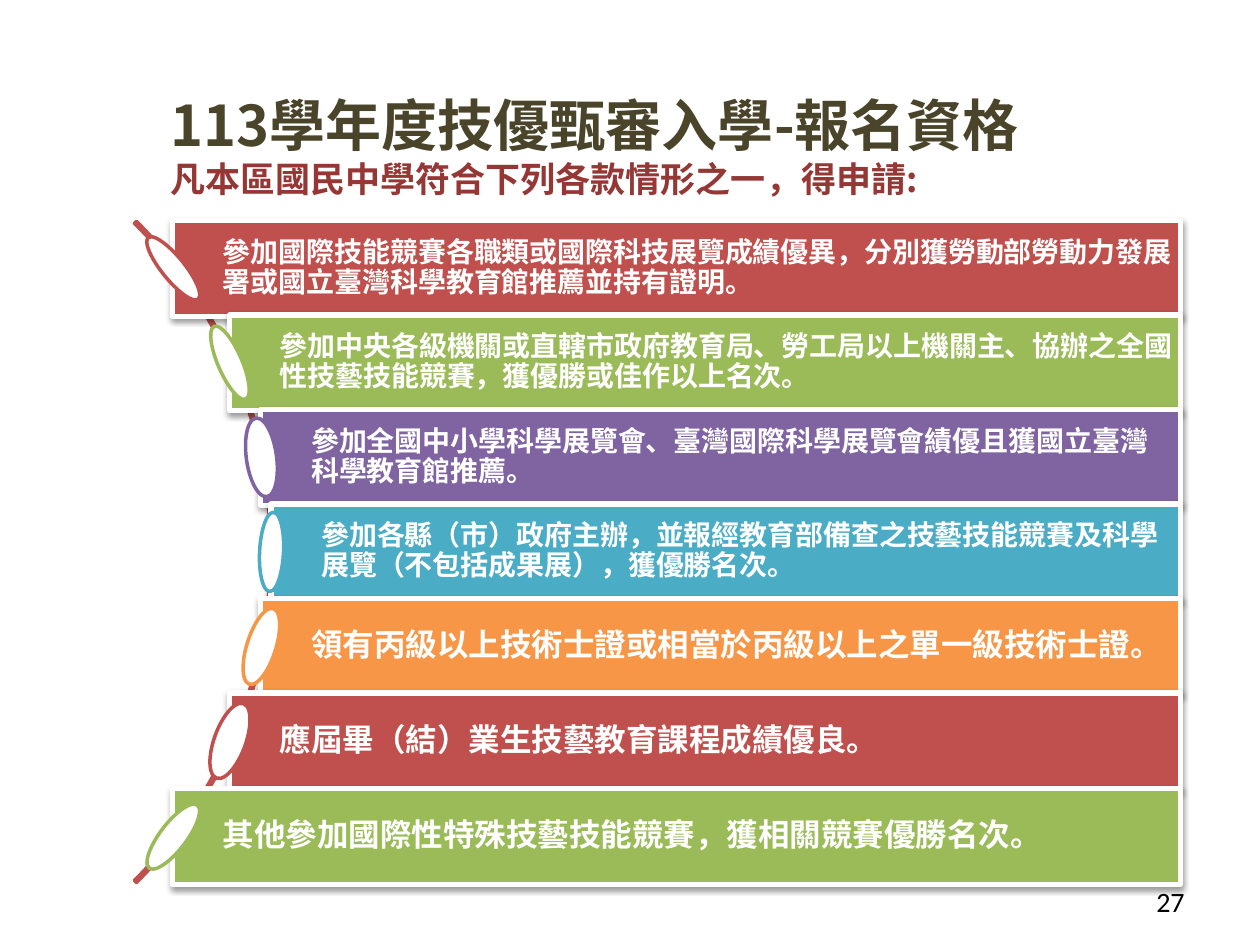
"""Build the slide listing who may apply for skills-based admission."""
from dataclasses import dataclass

from lxml import etree
from pptx import Presentation
from pptx.dml.color import RGBColor
from pptx.enum.shapes import MSO_SHAPE
from pptx.enum.text import MSO_ANCHOR, MSO_AUTO_SIZE, PP_ALIGN
from pptx.oxml.ns import qn
from pptx.shapes.autoshape import Shape
from pptx.slide import Slide
from pptx.util import Pt

RECTANGLE, ELLIPSE, BLOCK_ARC = MSO_SHAPE.RECTANGLE, MSO_SHAPE.OVAL, MSO_SHAPE.BLOCK_ARC
MIDDLE = MSO_ANCHOR.MIDDLE
LEFT, RIGHT = PP_ALIGN.LEFT, PP_ALIGN.RIGHT
NO_FIT = MSO_AUTO_SIZE.NONE

EMU_PER_PX = 9144
BAR_RIGHT = 937
BAR_HEIGHT = 76
BARS_TOP = 175
BARS_SPAN = 451
MARKER_WIDTH = 63
MARKER_OFFSET = 50


@dataclass(frozen=True)
class Theme:
    """Colours, fonts and type sizes of the slide."""

    red: str = "C0504D"
    green: str = "9BBB59"
    purple: str = "8064A2"
    teal: str = "4BACC6"
    orange: str = "F79646"
    olive: str = "4A452A"
    maroon: str = "953735"
    white: str = "FFFFFF"
    black: str = "000000"
    cjk_font: str = "Noto Sans CJK SC"
    number_font: str = "Calibri"
    title_size: int = 32
    subtitle_size: int = 20
    long_size: int = 16
    short_size: int = 18
    number_size: int = 16


THEME = Theme()


@dataclass(frozen=True)
class Condition:
    """One eligibility bar and the tilted marker at its left end."""

    left: int
    color: str
    size: int
    marker_height: int
    marker_tilt: float
    text: str


CONDITIONS = (
    Condition(137, THEME.red, THEME.long_size, 18, 51,
              "參加國際技能競賽各職類或國際科技展覽成績優異，分別獲勞動部勞動力發展署或國立臺灣科學教育館推薦並持有證明。"),
    Condition(182, THEME.green, THEME.long_size, 19, 66.5,
              "參加中央各級機關或直轄市政府教育局、勞工局以上機關主、協辦之全國性技藝技能競賽，獲優勝或佳作以上名次。"),
    Condition(207, THEME.purple, THEME.long_size, 24, 262.2,
              "參加全國中小學科學展覽會、臺灣國際科學展覽會績優且獲國立臺灣科學教育館推薦。"),
    Condition(215, THEME.teal, THEME.long_size, 19, 272.8,
              "參加各縣（市）政府主辦，並報經教育部備查之技藝技能競賽及科學展覽（不包括成果展），獲優勝名次。"),
    Condition(207, THEME.orange, THEME.short_size, 23, 287.6,
              "領有丙級以上技術士證或相當於丙級以上之單一級技術士證。"),
    Condition(182, THEME.red, THEME.short_size, 25, 109.9,
              "應屆畢（結）業生技藝教育課程成績優良。"),
    Condition(137, THEME.green, THEME.short_size, 21, 127.4,
              "其他參加國際性特殊技藝技能競賽，獲相關競賽優勝名次。"),
)


def px(length: float) -> int:
    """Turn a length in px into EMU."""
    return round(length * EMU_PER_PX)


def style_run(span, size: int, color: str, font: str, bold: bool = True) -> None:
    """Format a run, with the same typeface for Latin and East Asian text."""
    span.font.size = Pt(size)
    span.font.bold = bold
    span.font.color.rgb = RGBColor.from_string(color)
    span.font.name = font
    etree.SubElement(span.font._element, qn("a:ea"), typeface=font)


def add_outlined(page: Slide, kind: MSO_SHAPE, left: float, top: float, width: float,
                 height: float, line: str, weight: int, fill: str | None = None) -> Shape:
    """Add a shadowless preset shape with an outline and an optional fill."""
    shape = page.shapes.add_shape(kind, px(left), px(top), px(width), px(height))
    if fill:
        shape.fill.solid()
        shape.fill.fore_color.rgb = RGBColor.from_string(fill)
    else:
        shape.fill.background()
    shape.line.color.rgb = RGBColor.from_string(line)
    shape.line.width = Pt(weight)
    shape.shadow.inherit = False
    return shape


def add_drop_shadow(shape: Shape) -> None:
    """Give a shape a soft shadow falling straight down."""
    effects = shape._element.spPr.find(qn("a:effectLst"))
    shadow = etree.SubElement(effects, qn("a:outerShdw"), blurRad=str(Pt(3.1)),
                              dist=str(Pt(1.6)), dir="5400000", rotWithShape="0")
    color = etree.SubElement(shadow, qn("a:srgbClr"), val=THEME.black)
    etree.SubElement(color, qn("a:alpha"), val="38000")


def add_title(page: Slide) -> None:
    """Fill the title placeholder with the heading and its lead-in line."""
    title = page.shapes.title
    title.left, title.top, title.width, title.height = px(125), px(60), px(750), px(110)
    frame = title.text_frame
    frame.text = "113學年度技優甄審入學-報名資格\v凡本區國民中學符合下列各款情形之一，得申請:"
    frame.auto_size = NO_FIT
    frame.vertical_anchor = MIDDLE
    para = frame.paragraphs[0]
    para.alignment = LEFT
    heading, lead = para.runs
    style_run(heading, THEME.title_size, THEME.olive, THEME.cjk_font)
    style_run(lead, THEME.subtitle_size, THEME.maroon, THEME.cjk_font)


def add_arc(page: Slide) -> None:
    """Draw the thin arc on which the markers sit."""
    arc = add_outlined(page, BLOCK_ARC, -525, 67, 742, 742, THEME.red, 2)
    for index, value in enumerate((189, 27, 0.003)):
        arc.adjustments[index] = value


def add_condition(page: Slide, condition: Condition, top: int) -> None:
    """Draw one bar with its text, then its marker."""
    bar = add_outlined(page, RECTANGLE, condition.left, top, BAR_RIGHT - condition.left,
                       BAR_HEIGHT, THEME.white, 3, condition.color)
    add_drop_shadow(bar)
    frame = bar.text_frame
    frame.text = condition.text
    frame.word_wrap = True
    frame.vertical_anchor = MIDDLE
    frame.margin_left = px(40)
    frame.margin_top = frame.margin_right = frame.margin_bottom = px(4)
    para = frame.paragraphs[0]
    para.alignment = LEFT
    para.line_spacing = 0.9
    style_run(para.runs[0], condition.size, THEME.white, THEME.cjk_font)

    marker = add_outlined(page, ELLIPSE, condition.left - MARKER_OFFSET + (MARKER_OFFSET - MARKER_WIDTH // 2),
                          top + (BAR_HEIGHT - condition.marker_height) / 2, MARKER_WIDTH,
                          condition.marker_height, condition.color, 2, THEME.white)
    marker.rotation = condition.marker_tilt


def add_page_number(page: Slide) -> None:
    """Write the page number at the lower right."""
    box = page.shapes.add_textbox(px(717), px(695), px(233), px(40))
    frame = box.text_frame
    frame.text = "27"
    frame.word_wrap = True
    frame.vertical_anchor = MIDDLE
    para = frame.paragraphs[0]
    para.alignment = RIGHT
    style_run(para.runs[0], THEME.number_size, THEME.black, THEME.number_font, bold=False)


def main() -> None:
    """Build and save the deck."""
    deck = Presentation()
    deck.slide_width, deck.slide_height = px(1000), px(750)
    page = deck.slides.add_slide(deck.slide_layouts[5])
    add_title(page)
    add_arc(page)
    for index, condition in enumerate(CONDITIONS):
        add_condition(page, condition, BARS_TOP + index * BARS_SPAN // (len(CONDITIONS) - 1))
    add_page_number(page)
    deck.save("out.pptx")


if __name__ == "__main__":
    main()
